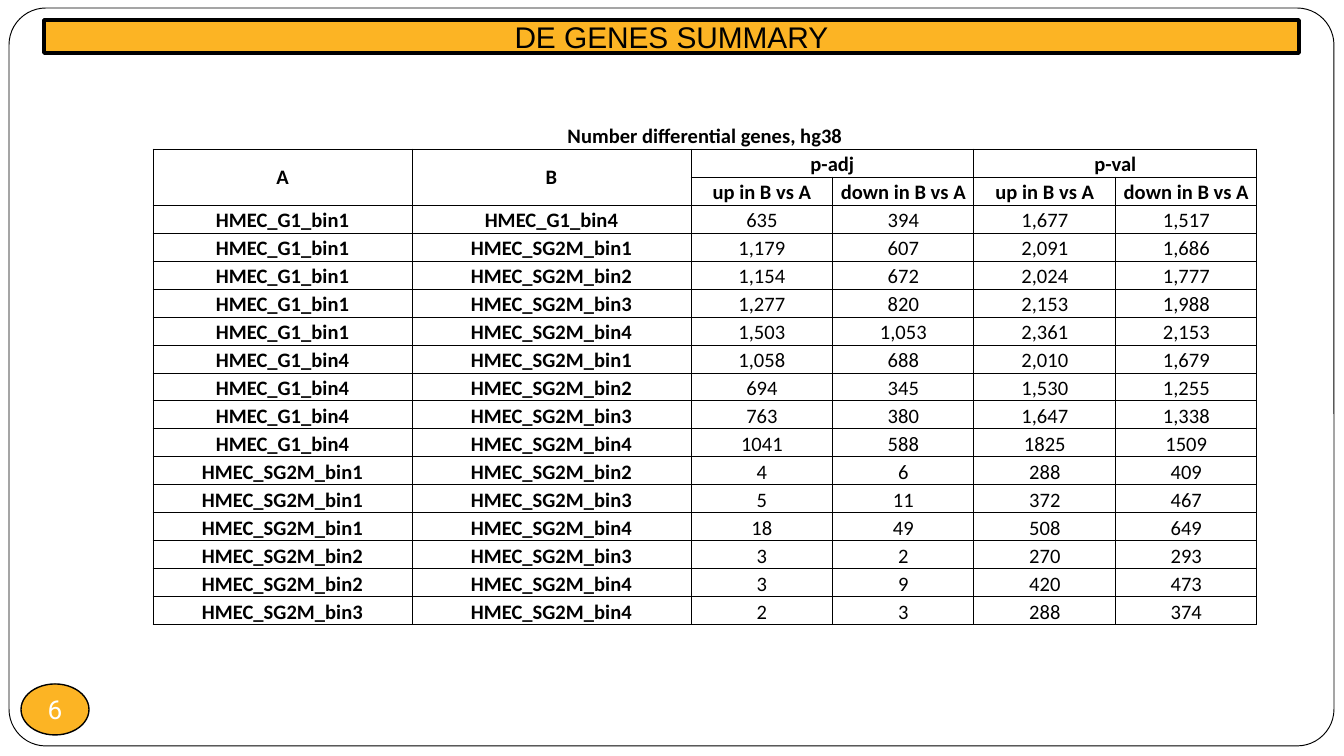
from lxml.etree import SubElement
from pptx import Presentation
from pptx.dml.color import RGBColor
from pptx.enum.shapes import MSO_SHAPE as Preset
from pptx.enum.text import MSO_ANCHOR as Anchor, MSO_AUTO_SIZE as AutoSize, PP_ALIGN as Align
from pptx.oxml.ns import qn
from pptx.util import Emu, Pt

PX_PER_INCH = 134.4
NO_STYLE = "{2D5ABB26-0587-4C30-8999-92F81FD0307C}"
CAPTION = "Number differential genes, hg38"
DIRECTIONS = ["up in B vs A", "down in B vs A"]
GENE_COUNTS = [
    ("G1_bin1", "G1_bin4", "635", "394", "1,677", "1,517"),
    ("G1_bin1", "SG2M_bin1", "1,179", "607", "2,091", "1,686"),
    ("G1_bin1", "SG2M_bin2", "1,154", "672", "2,024", "1,777"),
    ("G1_bin1", "SG2M_bin3", "1,277", "820", "2,153", "1,988"),
    ("G1_bin1", "SG2M_bin4", "1,503", "1,053", "2,361", "2,153"),
    ("G1_bin4", "SG2M_bin1", "1,058", "688", "2,010", "1,679"),
    ("G1_bin4", "SG2M_bin2", "694", "345", "1,530", "1,255"),
    ("G1_bin4", "SG2M_bin3", "763", "380", "1,647", "1,338"),
    ("G1_bin4", "SG2M_bin4", "1041", "588", "1825", "1509"),
    ("SG2M_bin1", "SG2M_bin2", "4", "6", "288", "409"),
    ("SG2M_bin1", "SG2M_bin3", "5", "11", "372", "467"),
    ("SG2M_bin1", "SG2M_bin4", "18", "49", "508", "649"),
    ("SG2M_bin2", "SG2M_bin3", "3", "2", "270", "293"),
    ("SG2M_bin2", "SG2M_bin4", "3", "9", "420", "473"),
    ("SG2M_bin3", "SG2M_bin4", "2", "3", "288", "374"),
]


def px(length):
    return Emu(round(length * 914400 / PX_PER_INCH))


def color(hex_string):
    return RGBColor.from_string(hex_string)


class SlideBuilder:
    INK, PAPER, ACCENT = "000000", "FFFFFF", "FCB424"

    def __init__(self, slide):
        self.slide = slide

    def add_text(self, frame, text, font, size, ink=INK, bold=False):
        para = frame.paragraphs[0]
        para.alignment = Align.CENTER
        span = para.add_run()
        span.text = text
        span.font.name, span.font.size, span.font.bold = font, Pt(size), bold
        span.font.color.rgb = color(ink)

    def paint(self, shape, fill, line_width):
        shape.fill.solid()
        shape.fill.fore_color.rgb = color(fill)
        shape.line.color.rgb = color(self.INK)
        shape.line.width = Pt(line_width)

    def shape(self, preset, left, top, width, height, fill, line_width):
        shape = self.slide.shapes.add_shape(preset, px(left), px(top), px(width), px(height))
        shape.shadow.inherit = False
        self.paint(shape, fill, line_width)
        return shape

    def page_frame(self):
        frame = self.shape(Preset.ROUNDED_RECTANGLE, 9, 8, 1325, 738, self.PAPER, 0.5)
        frame.adjustments[0] = 0.05

    def page_number(self, number):
        badge = self.shape(Preset.OVAL, 21, 684, 68, 51, self.ACCENT, 0.75)
        frame = badge.text_frame
        frame.margin_left = frame.margin_right = frame.margin_top = frame.margin_bottom = 0
        frame.word_wrap = False
        frame.vertical_anchor = Anchor.MIDDLE
        self.add_text(frame, number, "Roboto", 14, self.PAPER)

    def title(self, text):
        """Turn the title placeholder into a rounded banner in front of the frame."""
        banner = self.slide.shapes.title
        banner.left, banner.top, banner.width, banner.height = px(44), px(20), px(1255), px(33)
        geometry = SubElement(banner._element.spPr, qn("a:prstGeom"), prst="roundRect")
        SubElement(geometry, qn("a:avLst"))
        self.paint(banner, self.ACCENT, 2)
        frame = banner.text_frame
        frame.auto_size = AutoSize.NONE
        frame.vertical_anchor = Anchor.MIDDLE
        self.add_text(frame, text, "Arial", 16)
        self.slide.shapes._spTree.append(banner._element)

    def cell_borders(self, cell, sides):
        properties = cell._tc.get_or_add_tcPr()
        for side in sides:
            line = SubElement(properties, qn(f"a:ln{side}"), w=str(Pt(0.5)))
            SubElement(SubElement(line, qn("a:solidFill")), qn("a:srgbClr"), val=self.INK)

    def table(self, left, top, widths, row_height, rows, merges, bold_rows, bold_columns):
        """Draw a ruled table whose first row is a caption without side rules."""
        graphic = self.slide.shapes.add_table(
            len(rows), len(widths), px(left), px(top), px(sum(widths)), px(row_height * len(rows)))
        table = graphic.table
        table.first_row = table.horz_banding = False
        table._tbl.tblPr.find(qn("a:tableStyleId")).text = NO_STYLE
        for column, width in zip(table.columns, widths):
            column.width = px(width)
        for r, texts in enumerate(rows):
            table.rows[r].height = px(row_height)
            for c, text in enumerate(texts):
                cell = table.cell(r, c)
                cell.margin_left = cell.margin_right = cell.margin_top = px(1)
                cell.margin_bottom = 0
                cell.vertical_anchor = Anchor.BOTTOM
                self.cell_borders(cell, "LRTB" if r else "B")
                cell.fill.background()
                if text:
                    bold = r < bold_rows or c < bold_columns
                    self.add_text(cell.text_frame, text, "Calibri", 11, bold=bold)
        for first, last in merges:
            origin = table.cell(*first)
            origin.merge(table.cell(*last))
            if last[0] > first[0]:
                origin.vertical_anchor = Anchor.MIDDLE


def main():
    deck = Presentation()
    deck.slide_width, deck.slide_height = px(1344), px(756)
    title_only = deck.slide_layouts[5]
    builder = SlideBuilder(deck.slides.add_slide(title_only))
    builder.page_frame()
    builder.page_number("6")
    builder.title("DE GENES SUMMARY")
    rows = [
        [CAPTION] + [""] * 5,
        ["A", "B", "p-adj", "", "p-val", ""],
        ["", ""] + DIRECTIONS * 2,
    ]
    rows += [[f"HMEC_{a}", f"HMEC_{b}", *counts] for a, b, *counts in GENE_COUNTS]
    merges = [((0, 0), (0, 5)), ((1, 0), (2, 0)), ((1, 1), (2, 1)),
              ((1, 2), (1, 3)), ((1, 4), (1, 5))]
    builder.table(153, 121, [259, 279] + [142, 141] * 2, 28, rows, merges,
                  bold_rows=3, bold_columns=2)
    deck.save("out.pptx")


if __name__ == "__main__":
    main()
